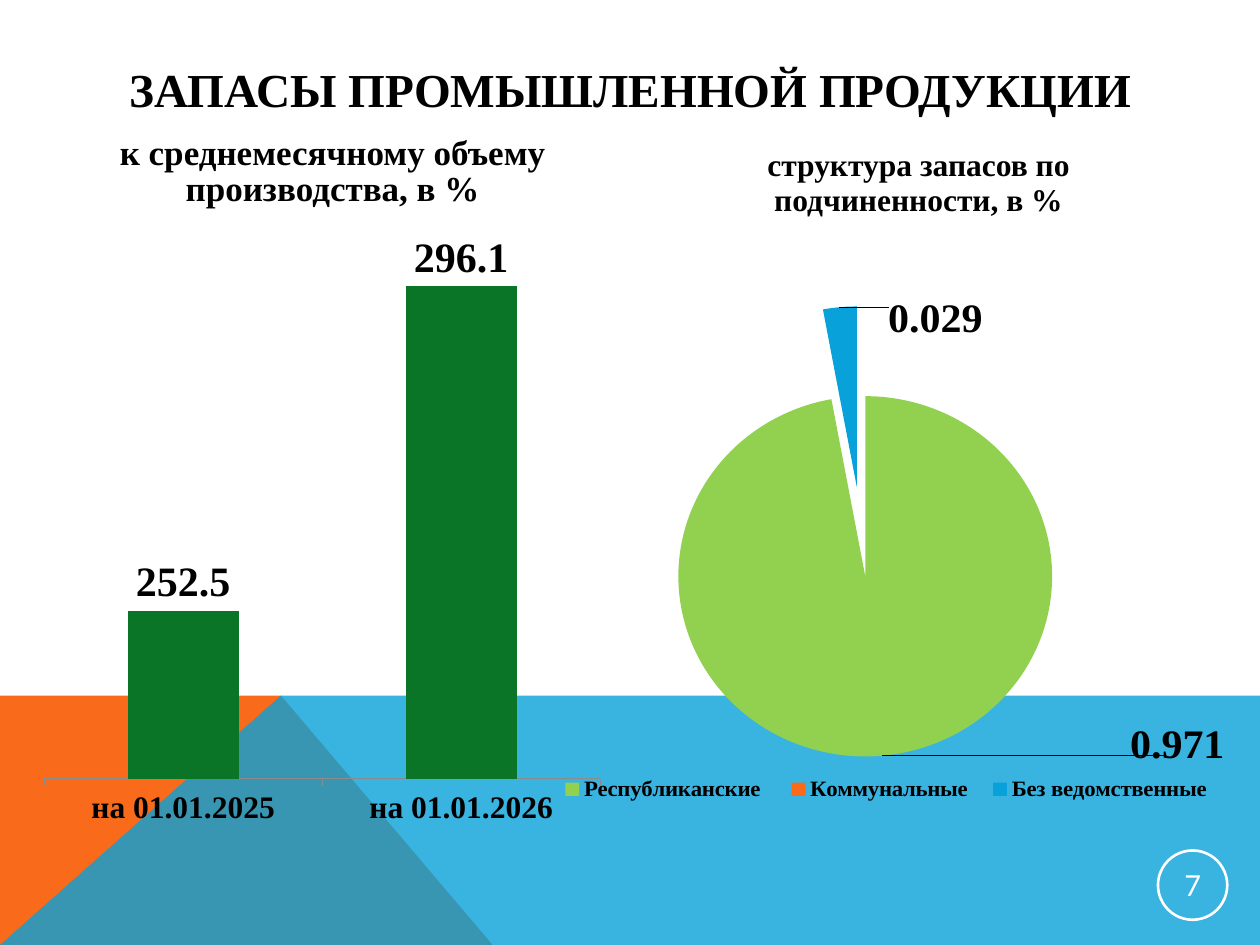
from pptx import Presentation
from pptx.chart.data import CategoryChartData
from pptx.dml.color import RGBColor
from pptx.enum.chart import XL_CHART_TYPE, XL_LABEL_POSITION, XL_LEGEND_POSITION, XL_TICK_MARK
from pptx.enum.shapes import MSO_SHAPE
from pptx.enum.text import MSO_ANCHOR, PP_ALIGN
from pptx.oxml import parse_xml
from pptx.oxml.ns import nsdecls, qn
from pptx.util import Inches, Pt

BAR, PIE = XL_CHART_TYPE.COLUMN_CLUSTERED, XL_CHART_TYPE.PIE
OUT_END = XL_LABEL_POSITION.OUTSIDE_END
BOTTOM = XL_LEGEND_POSITION.BOTTOM
TICK_OUT = XL_TICK_MARK.OUTSIDE
OVAL = MSO_SHAPE.OVAL
CENTER = PP_ALIGN.CENTER
MIDDLE, LOW = MSO_ANCHOR.MIDDLE, MSO_ANCHOR.BOTTOM
SERIF, SANS = "Times New Roman", "Lato"
WIDE, HIGH = 10, 7.5
BLACK, WHITE, ORANGE, BLUE = "000000", "FFFFFF", "F96A1B", "08A1D9"
GREEN, LIME, GREY = "0B7527", "92D050", "8B8B8B"


def color(code):
    """Turn a hex string into a colour."""
    return RGBColor.from_string(code)


def paint(fill, code):
    """Make a fill solid."""
    fill.solid()
    fill.fore_color.rgb = color(code)


def style(font, size, code=BLACK, name=SERIF, bold=True):
    """Set the look of a font."""
    font.size, font.name, font.bold = Pt(size), name, bold
    font.color.rgb = color(code)


def place(shape, box):
    """Move a shape to a box in inches."""
    shape.left, shape.top, shape.width, shape.height = map(Inches, box)


def write(frame, text, size, anchor, line=None, **look):
    """Fill a text frame with one centred paragraph."""
    frame.word_wrap, frame.vertical_anchor = True, anchor
    para = frame.paragraphs[0]
    para.text, para.alignment = text, CENTER
    if line:
        para.line_spacing = Pt(line)
    style(para.font, size, **look)


def band(slide, box, points, code, alpha=None):
    """Draw a filled outline from points given as shares of a box."""
    left, top, width, height = box
    spots = [(Inches(left + x * width), Inches(top + y * height)) for x, y in points]
    form = slide.shapes.build_freeform(*spots[0])
    form.add_line_segments(spots[1:], close=True)
    shape = form.convert_to_shape()
    shape.shadow.inherit = False
    paint(shape.fill, code)
    shape.line.fill.background()
    if alpha:
        tone = next(shape._element.spPr.iter(qn("a:srgbClr")))
        tone.append(parse_xml(f'<a:alpha {nsdecls("a")} val="{alpha * 1000}"/>'))


def floor(slide, box):
    """Draw the coloured bands at the foot of the slide."""
    peak = 0.223
    band(slide, box, [(0, 1), (0, 0), (peak, 0), (0.391, 1)], ORANGE)
    band(slide, box, [(0, 1), (peak, 0), (1, 0), (1, 1)], BLUE, 80)


def heading(slide, box, text):
    """Place the slide title."""
    title = slide.shapes.title
    place(title, box)
    write(title.text_frame, text, 27, MIDDLE)


def caption(slide, box, text, size, inset=0.1):
    """Add a chart caption that sits on the foot of its box."""
    frame = slide.shapes.add_textbox(*map(Inches, box)).text_frame
    frame.margin_left = frame.margin_right = Inches(inset)
    write(frame, text, size, LOW, 20)


def layout(parent, index, box, inner=False):
    """Set a manual chart layout from shares x, y and maybe width, height."""
    for old in parent.findall(qn("c:layout")):
        parent.remove(old)
    target = '<c:layoutTarget val="inner"/>' if inner else ""
    modes = '<c:xMode val="edge"/><c:yMode val="edge"/>' if len(box) == 4 else ""
    sizes = "".join(f'<c:{key} val="{part}"/>' for key, part in zip("xywh", box))
    parent.insert(index, parse_xml(
        f'<c:layout {nsdecls("c")}><c:manualLayout>{target}{modes}{sizes}'
        "</c:manualLayout></c:layout>"))


def graph(slide, box, kind, cats, vals, plot):
    """Add a chart with one series and return it."""
    data = CategoryChartData()
    data.categories = cats
    data.add_series("Series 1", vals)
    chart = slide.shapes.add_chart(kind, *map(Inches, box), data).chart
    chart.has_title = chart.has_legend = False
    style(chart.font, 18, name=SANS, bold=False)
    layout(chart._chartSpace.chart.plotArea, 0, plot, True)
    return chart


def bars(slide, box):
    """Add the column chart of stock levels."""
    chart = graph(slide, box, BAR, ["на 01.01.2025", "на 01.01.2026"],
                  [252.5, 296.1], (0.032, 0.032, 0.935, 0.86))
    plot = chart.plots[0]
    plot.gap_width, plot.vary_by_categories = 150, False
    row = plot.series[0]
    paint(row.format.fill, GREEN)
    labels = row.data_labels
    labels.show_value, labels.position = True, OUT_END
    style(labels.font, 24)
    scale, axis = chart.value_axis, chart.category_axis
    scale.minimum_scale, scale.maximum_scale = 230, 300
    scale.has_major_gridlines = scale.visible = False
    axis.major_tick_mark = TICK_OUT
    axis.format.line.color.rgb = color(GREY)
    style(axis.tick_labels.font, 18)


def pie(slide, box):
    """Add the pie chart of stock structure."""
    names = ["Республиканские ", "Коммунальные", "Без ведомственные"]
    chart = graph(slide, box, PIE, names, [0.971, 0, 0.029], (0, 0.05, 0.937, 0.76))
    chart.plots[0].vary_by_categories = True
    row = chart.plots[0].series[0]
    for index, code in enumerate([LIME, ORANGE, BLUE]):
        paint(row.points[index].format.fill, code)
    row._element.find(qn("c:dPt")).addprevious(
        parse_xml(f'<c:explosion {nsdecls("c")} val="25"/>'))
    row.data_labels.show_value = False
    for index in (0, 2):
        label = row.points[index].data_label
        style(label.font, 24)
        label.position = OUT_END
    shifts = [(0.41, -0.07), (0.21, 0.07)]
    for item, shift in zip(row._element.iter(qn("c:dLbl")), shifts):
        layout(item, 1, shift)
    chart.has_legend = True
    legend = chart.legend
    legend.position, legend.include_in_layout = BOTTOM, False
    style(legend.font, 13)
    layout(legend._element, 1, (0.01, 0.83, 0.99, 0.07))


def badge(slide, box, text):
    """Add the ringed page number."""
    ring = slide.shapes.add_shape(OVAL, *map(Inches, box))
    ring.shadow.inherit = False
    ring.fill.background()
    ring.line.color.rgb = color(WHITE)
    ring.line.width = Pt(1.5)
    frame = ring.text_frame
    frame.margin_left = frame.margin_right = Inches(0.01)
    frame.margin_top = frame.margin_bottom = Inches(0.01)
    write(frame, text, 16.5, MIDDLE, code=WHITE, name=SANS, bold=False)


def main():
    """Build the slide and save it."""
    deck = Presentation()
    deck.slide_width, deck.slide_height = Inches(WIDE), Inches(HIGH)
    slide = deck.slides.add_slide(deck.slide_layouts[5])
    floor(slide, (0, 5.52, WIDE, HIGH - 5.52))
    heading(slide, (0.28, 0.4, 9.45, 0.6), "ЗАПАСЫ ПРОМЫШЛЕННОЙ ПРОДУКЦИИ")
    caption(slide, (0.2, 1.15, 4.88, 0.55),
            "к среднемесячному объему производства, в %", 20)
    bars(slide, (0.2, 1.86, 4.72, 4.84))
    caption(slide, (5.08, 0.99, 4.42, 0.79),
            "структура запасов по подчиненности, в %", 18, 0.3)
    pie(slide, (4.29, 2.02, 5.43, 4.88))
    badge(slide, (9.19, 6.75, 0.55, 0.55), "7")
    deck.save("out.pptx")


if __name__ == "__main__":
    main()
